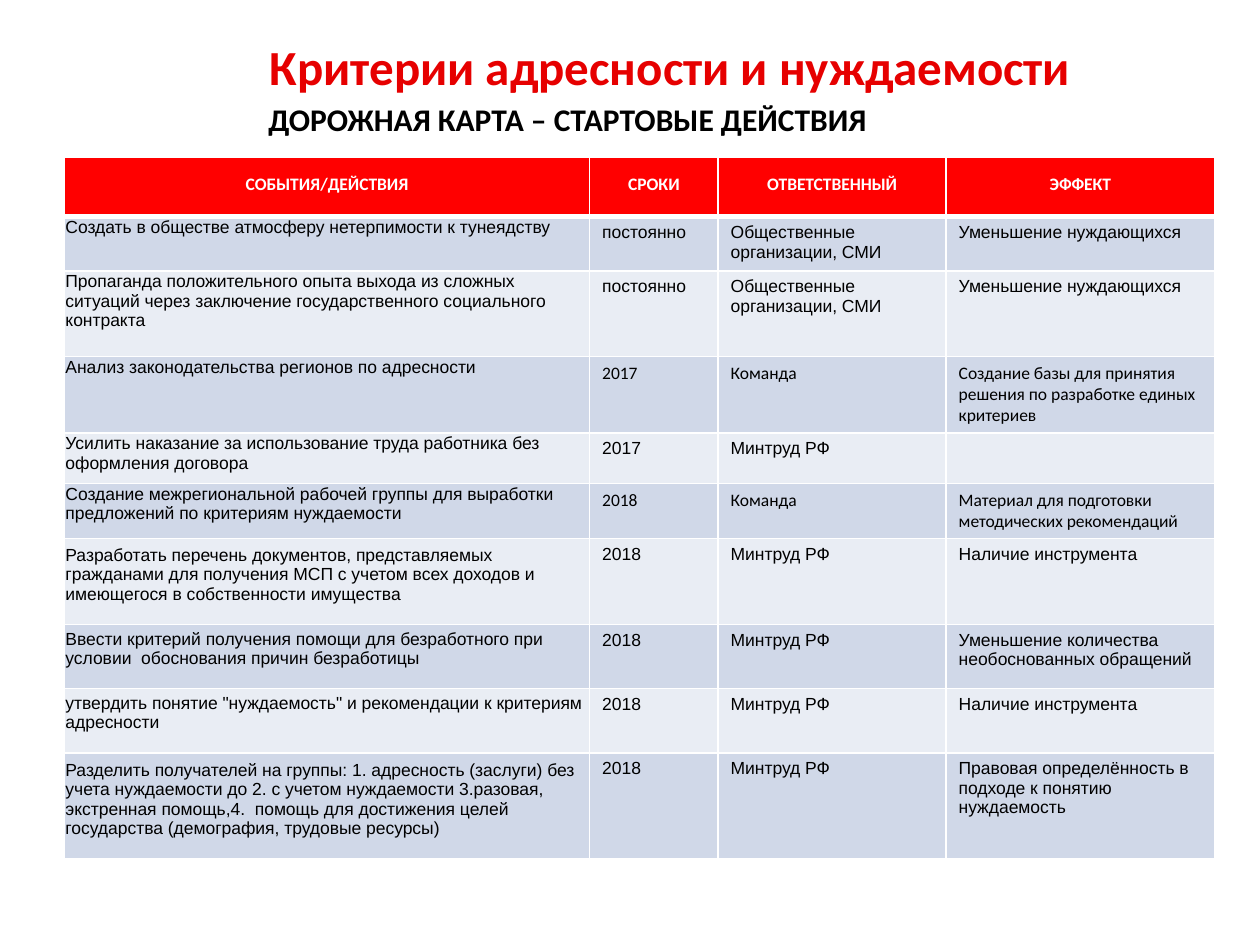
from dataclasses import dataclass

from lxml import etree
from pptx import Presentation
from pptx.dml.color import RGBColor
from pptx.enum.text import MSO_ANCHOR, MSO_AUTO_SIZE, PP_ALIGN
from pptx.oxml.ns import qn
from pptx.util import Inches, Pt

LEFT, CENTER = PP_ALIGN.LEFT, PP_ALIGN.CENTER
TOP, MIDDLE, BOTTOM = MSO_ANCHOR.TOP, MSO_ANCHOR.MIDDLE, MSO_ANCHOR.BOTTOM
FIXED = MSO_AUTO_SIZE.NONE

TITLE_RED = RGBColor(0xE6, 0x00, 0x00)
HEAD_RED = RGBColor(0xFF, 0x00, 0x00)
BLACK = RGBColor(0x00, 0x00, 0x00)
WHITE = RGBColor(0xFF, 0xFF, 0xFF)
BANDS = (RGBColor(0xD0, 0xD8, 0xE8), RGBColor(0xE9, 0xED, 0xF4))


@dataclass
class Step:
    action: str
    term: str
    owner: str
    effect: str
    height: float
    font: str = "Arial"  # font of the three right-hand columns
    low: bool = False  # action text sits one line above the cell bottom


HEADS = ("СОБЫТИЯ/ДЕЙСТВИЯ", "СРОКИ", "ОТВЕТСТВЕННЫЙ", "ЭФФЕКТ")
WIDTHS = (4.17, 1.02, 1.81, 2.13)
HEAD_H = 0.47
STEPS = (
    Step("Создать в обществе атмосферу нетерпимости к тунеядству",
         "постоянно", "Общественные организации, СМИ",
         "Уменьшение нуждающихся", 0.43),
    Step("Пропаганда положительного опыта выхода из сложных ситуаций через "
         "заключение государственного социального контракта",
         "постоянно", "Общественные организации, СМИ",
         "Уменьшение нуждающихся", 0.68),
    Step("Анализ законодательства регионов по адресности",
         "2017", "Команда",
         "Создание базы для принятия решения по разработке единых критериев",
         0.6, font="Calibri"),
    Step("Усилить наказание за использование труда работника без "
         "оформления договора", "2017", "Минтруд РФ", "", 0.4),
    Step("Создание межрегиональной рабочей группы для выработки "
         "предложений по критериям нуждаемости",
         "2018", "Команда",
         "Материал для подготовки методических рекомендаций",
         0.44, font="Calibri"),
    Step("Разработать перечень документов, представляемых гражданами для "
         "получения МСП с учетом всех доходов и имеющегося в собственности "
         "имущества", "2018", "Минтруд РФ", "Наличие инструмента",
         0.68, low=True),
    Step("Ввести критерий получения помощи для безработного при условии  "
         "обоснования причин безработицы", "2018", "Минтруд РФ",
         "Уменьшение количества необоснованных обращений", 0.51, low=True),
    Step('утвердить понятие "нуждаемость" и рекомендации к критериям '
         "адресности", "2018", "Минтруд РФ", "Наличие инструмента",
         0.51, low=True),
    Step("Разделить получателей на группы: 1. адресность (заслуги) без учета "
         "нуждаемости до 2. с учетом нуждаемости 3.разовая, экстренная "
         "помощь,4.  помощь для достижения целей государства (демография, "
         "трудовые ресурсы)", "2018", "Минтруд РФ",
         "Правовая определённость в подходе к понятию нуждаемость",
         0.84, low=True),
)


def write(frame, text: str, *, size: float = 10, font: str = "Arial",
          color: RGBColor = BLACK, bold: bool = False, align=LEFT,
          spacing: float = 1.0) -> None:
    para = frame.paragraphs[0]
    para.alignment = align
    para.line_spacing = spacing
    para.space_before = Pt(0)
    run = para.add_run()
    run.text = text
    run.font.size = Pt(size)
    run.font.name = font
    run.font.bold = bold
    run.font.color.rgb = color


def place(shape, left: float, top: float, width: float, height: float,
          anchor) -> None:
    shape.left, shape.top = Inches(left), Inches(top)
    shape.width, shape.height = Inches(width), Inches(height)
    frame = shape.text_frame
    frame.word_wrap = True
    frame.auto_size = FIXED
    frame.vertical_anchor = anchor


def edge(cell, side: str, width: float) -> None:
    line = etree.SubElement(cell._tc.get_or_add_tcPr(), qn(f"a:ln{side}"),
                            w=str(Pt(width)))
    fill = etree.SubElement(line, qn("a:solidFill"))
    etree.SubElement(fill, qn("a:srgbClr"), val=str(WHITE))


def paint(cell, color: RGBColor, top: float = 1, bottom: float = 1) -> None:
    for side, width in (("L", 1), ("R", 1), ("T", top), ("B", bottom)):
        edge(cell, side, width)
    cell.fill.solid()
    cell.fill.fore_color.rgb = color


def fill_step(table, row: int, step: Step) -> None:
    table.rows[row].height = Inches(step.height)
    texts = (step.action, step.term, step.owner, step.effect)
    for col, text in enumerate(texts):
        cell = table.cell(row, col)
        paint(cell, BANDS[(row - 1) % 2], top=3 if row == 1 else 1)
        write(cell.text_frame, text, font=step.font if col else "Arial")
    cell = table.cell(row, 0)
    cell.margin_left = cell.margin_right = cell.margin_top = Inches(0.01)
    cell.margin_bottom = Inches(0.16 if step.low else 0)
    cell.vertical_anchor = BOTTOM if step.low else TOP


def main() -> None:
    deck = Presentation()
    deck.slide_width, deck.slide_height = Inches(10), Inches(7.5)
    slide = deck.slides.add_slide(deck.slide_layouts[1])

    # Title and subtitle
    title, body = slide.placeholders
    place(title, 2.04, 0.33, 7.15, 0.39, MIDDLE)
    write(title.text_frame, "Критерии адресности и нуждаемости",
          size=28, font="Calibri", color=TITLE_RED, bold=True)
    place(body, 2.03, 0.74, 5, 0.4, TOP)
    write(body.text_frame, "ДОРОЖНАЯ КАРТА – СТАРТОВЫЕ ДЕЙСТВИЯ",
          size=18, font="Calibri", bold=True)
    props = body.text_frame.paragraphs[0]._p.get_or_add_pPr()
    props.set("marL", "0")
    props.set("indent", "0")
    etree.SubElement(props, qn("a:buNone"))

    # Road map table
    total = HEAD_H + sum(step.height for step in STEPS)
    table = slide.shapes.add_table(
        len(STEPS) + 1, len(HEADS), Inches(0.51), Inches(1.25),
        Inches(sum(WIDTHS)), Inches(total)).table
    table.rows[0].height = Inches(HEAD_H)
    for col, (head, width) in enumerate(zip(HEADS, WIDTHS)):
        table.columns[col].width = Inches(width)
        cell = table.cell(0, col)
        paint(cell, HEAD_RED, bottom=3)
        write(cell.text_frame, head, font="Calibri", color=WHITE, bold=True,
              align=CENTER, spacing=1.5)
    for row, step in enumerate(STEPS, 1):
        fill_step(table, row, step)

    deck.save("out.pptx")


if __name__ == "__main__":
    main()
